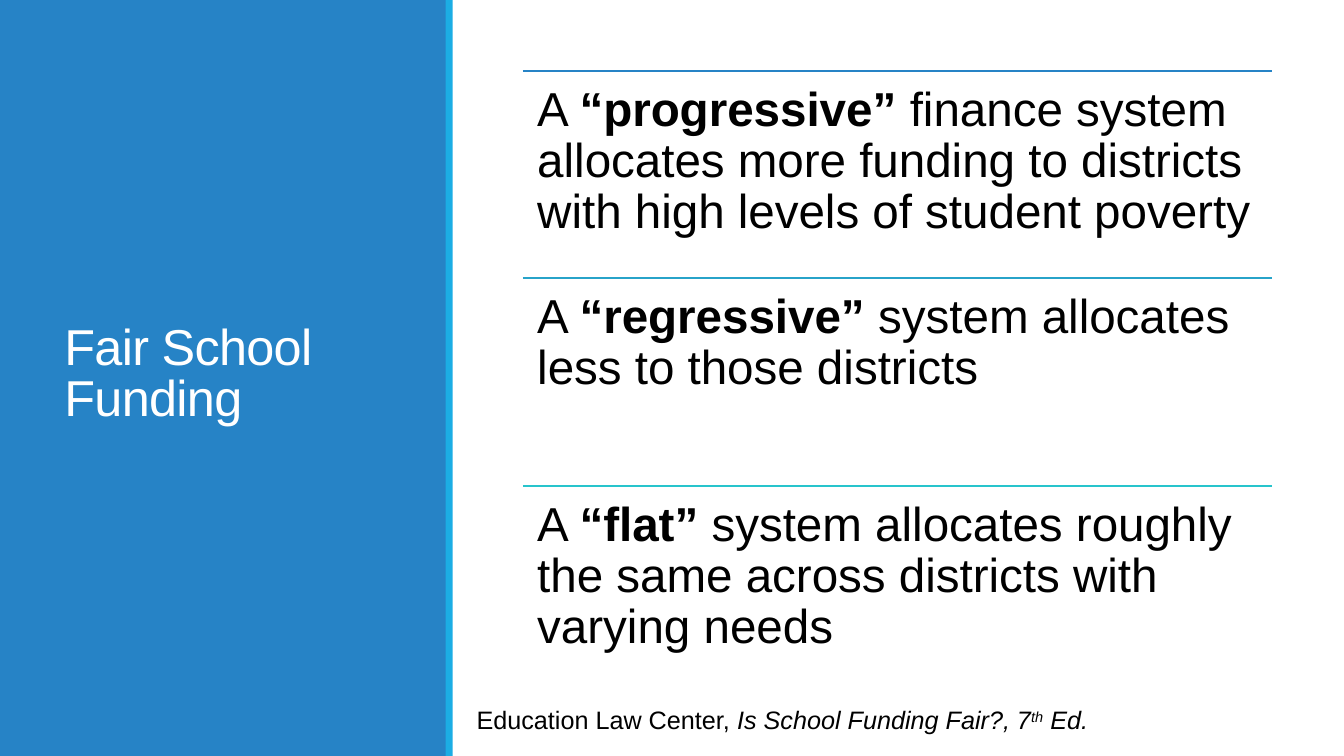
from lxml.etree import SubElement
from pptx import Presentation
from pptx.dml.color import RGBColor
from pptx.enum.shapes import MSO_CONNECTOR, MSO_SHAPE
from pptx.enum.text import MSO_ANCHOR, MSO_AUTO_SIZE, PP_ALIGN
from pptx.oxml.ns import qn
from pptx.util import Cm, Pt

BLUE = RGBColor(0x26, 0x83, 0xC6)
SKY = RGBColor(0x1C, 0xAD, 0xE4)
TEAL = RGBColor(0x27, 0xA3, 0xC9)
AQUA = RGBColor(0x28, 0xC4, 0xCC)
WHITE = RGBColor(0xFF, 0xFF, 0xFF)
BLACK = RGBColor(0, 0, 0)

SLIDE_HEIGHT = Cm(19.05)
SYSTEMS_LEFT, SYSTEMS_TOP = Cm(13.18), Cm(1.78)
SYSTEMS_WIDTH, SYSTEM_HEIGHT = Cm(18.88), Cm(5.23)
SYSTEM_INSET = Cm(0.36)

SYSTEMS = [
    (BLUE, "“progressive”",
     " finance system allocates more funding to districts with high levels of student poverty"),
    (TEAL, "“regressive”", " system allocates less to those districts"),
    (AQUA, "“flat”",
     " system allocates roughly the same across districts with varying needs"),
]


def set_attributes(target, values):
    for name, value in values.items():
        setattr(target, name, value)


def add_run(paragraph, text, size, color=BLACK, **font_values):
    run = paragraph.add_run()
    run.text = text
    set_attributes(run.font, {"name": "Arial", "size": Pt(size), **font_values})
    run.font.color.rgb = color
    return run


def add_band(slide, left, width, color):
    """Add a plain band as tall as the slide."""
    shape = slide.shapes.add_shape(MSO_SHAPE.RECTANGLE, left, 0, width, SLIDE_HEIGHT)
    shape.shadow.inherit = False
    shape.fill.solid()
    shape.fill.fore_color.rgb = color
    shape.line.fill.background()


def add_rule(slide, left, top, width, color):
    connector = slide.shapes.add_connector(
        MSO_CONNECTOR.STRAIGHT, left, top, left + width, top)
    connector.line.color.rgb = color
    connector.line.width = Pt(1.25)
    SubElement(connector.element.spPr, qn("a:effectLst"))


def add_text_box(slide, left, top, width, height, **frame_values):
    """Add a wrapping text box and return its first paragraph."""
    frame = slide.shapes.add_textbox(left, top, width, height).text_frame
    set_attributes(frame, {"word_wrap": True, **frame_values})
    return frame.paragraphs[0]


def place_title(slide, text):
    title = slide.shapes.title
    set_attributes(title, {"left": Cm(1.37), "top": Cm(1.45),
                           "width": Cm(8.56), "height": Cm(16.03)})
    set_attributes(title.text_frame, {"word_wrap": True,
                                      "auto_size": MSO_AUTO_SIZE.NONE,
                                      "vertical_anchor": MSO_ANCHOR.MIDDLE})
    paragraph = title.text_frame.paragraphs[0]
    set_attributes(paragraph, {"alignment": PP_ALIGN.LEFT, "line_spacing": 0.85})
    run = add_run(paragraph, text, 36, WHITE)
    run.font._element.set("spc", "-50")
    # Bring the title in front of the side panel
    title.element.getparent().append(title.element)


def add_system(slide, top, color, term, description):
    add_rule(slide, SYSTEMS_LEFT, top, SYSTEMS_WIDTH, color)
    paragraph = add_text_box(
        slide, SYSTEMS_LEFT, top, SYSTEMS_WIDTH, SYSTEM_HEIGHT,
        margin_left=SYSTEM_INSET, margin_right=SYSTEM_INSET,
        margin_top=SYSTEM_INSET, margin_bottom=SYSTEM_INSET)
    paragraph.line_spacing = 0.9
    add_run(paragraph, "A ", 34)
    add_run(paragraph, term, 34, bold=True)
    add_run(paragraph, description, 34)


def add_citation(slide):
    paragraph = add_text_box(slide, Cm(11.76), Cm(17.63), Cm(16), Cm(1.02),
                             auto_size=MSO_AUTO_SIZE.SHAPE_TO_FIT_TEXT)
    add_run(paragraph, "Education Law Center, ", 18)
    add_run(paragraph, "Is School Funding Fair?, 7", 18, italic=True)
    ordinal = add_run(paragraph, "th", 18, italic=True)
    ordinal.font._element.set("baseline", "30000")
    add_run(paragraph, " Ed.", 18, italic=True)


def main():
    presentation = Presentation()
    set_attributes(presentation, {"slide_width": Cm(33.87), "slide_height": SLIDE_HEIGHT})
    slide = presentation.slides.add_slide(presentation.slide_layouts[5])

    add_band(slide, 0, Cm(11.25), BLUE)
    place_title(slide, "Fair School Funding")
    add_band(slide, Cm(11.23), Cm(0.18), SKY)
    for index, system in enumerate(SYSTEMS):
        add_system(slide, SYSTEMS_TOP + index * SYSTEM_HEIGHT, *system)
    add_citation(slide)

    presentation.save("out.pptx")


if __name__ == "__main__":
    main()
